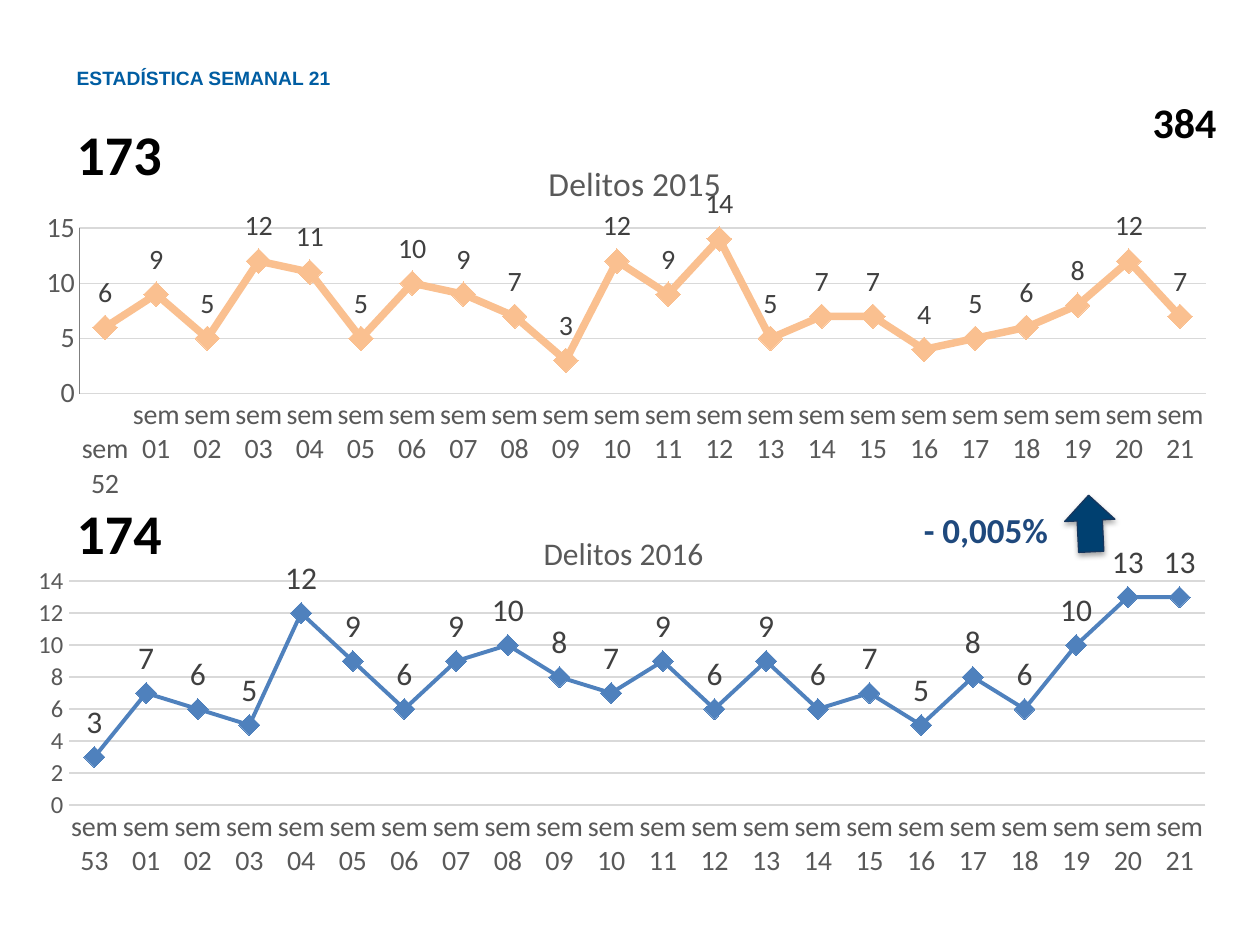
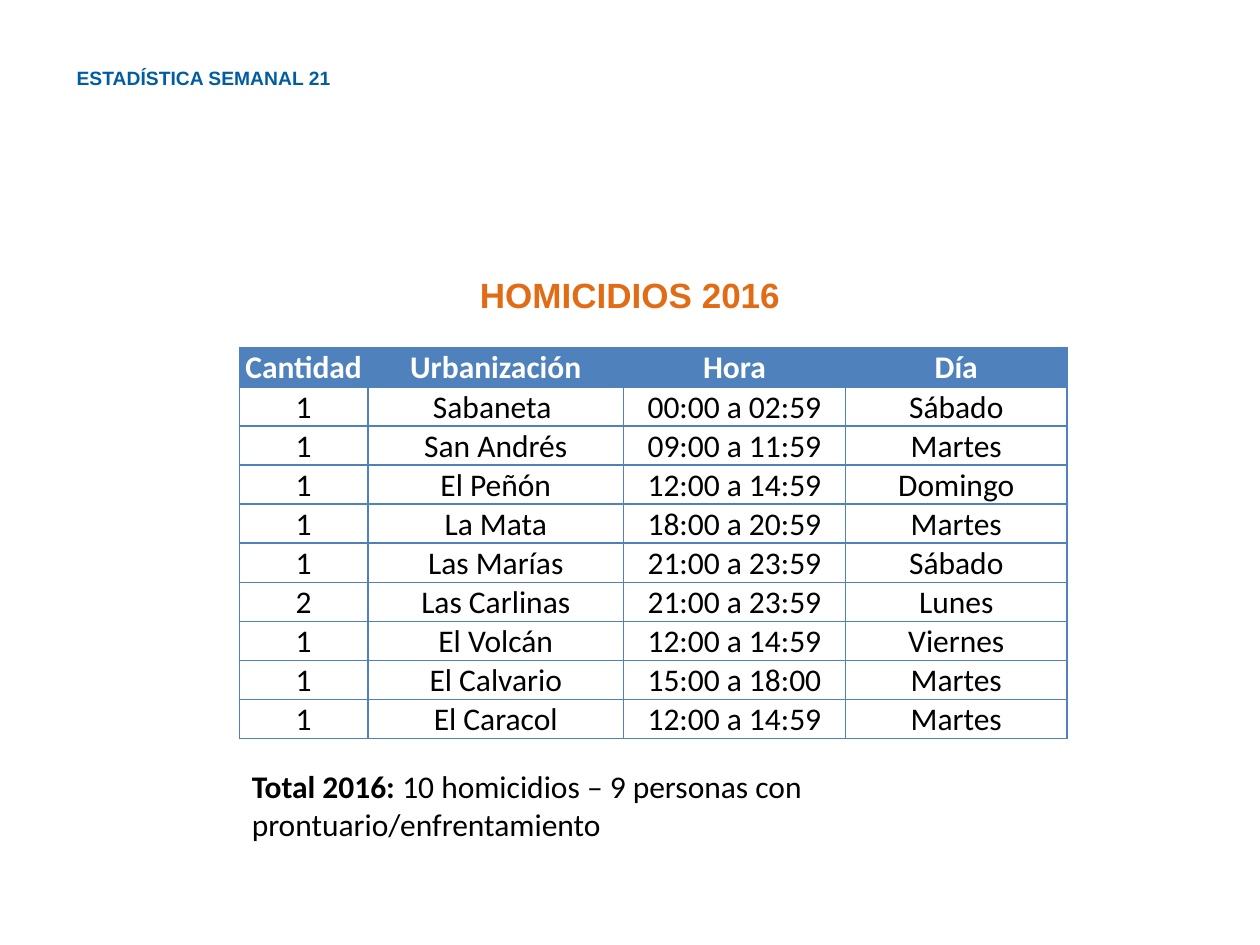
from lxml import etree
from pptx import Presentation
from pptx import util as u
from pptx.chart import data as chart_data
from pptx.dml.color import RGBColor
from pptx.enum import chart as ch, shapes, text
from pptx.oxml import ns, parse_xml

BLUE, ORANGE, PEACH = "4F81BD", "E16C15", "FAC090"
TITLE_BLUE, NAVY, ARROW_BLUE, ARROW_EDGE = "005DA2", "1F497D", "004070", "17375E"
BLACK, WHITE, GRID, AXIS_TEXT, LABEL_TEXT, AXIS_LINE = (
    "000000", "FFFFFF", "D9D9D9", "595959", "404040", "7F7F7F")
WEEKS = [f"sem {week:02d}" for week in range(1, 22)]
CRIMES_2015 = (6, 9, 5, 12, 11, 5, 10, 9, 7, 3, 12, 9, 14, 5, 7, 7, 4, 5, 6, 8, 12, 7)
CRIMES_2016 = (3, 7, 6, 5, 12, 9, 6, 9, 10, 8, 7, 9, 6, 9, 6, 7, 5, 8, 6, 10, 13, 13)
HOMICIDES = (
    ("Cantidad", "Urbanización", "Hora", "Día"),
    ("1", "Sabaneta ", "00:00 a 02:59", "Sábado"),
    ("1", "San Andrés", "09:00 a 11:59", "Martes"),
    ("1", "El Peñón", "12:00 a 14:59", "Domingo"),
    ("1", "La Mata", "18:00 a 20:59", "Martes"),
    ("1", "Las Marías", "21:00 a 23:59", "Sábado"),
    ("2", "Las Carlinas", "21:00 a 23:59", "Lunes"),
    ("1", "El Volcán", "12:00 a 14:59", "Viernes"),
    ("1", "El Calvario", "15:00 a 18:00", "Martes"),
    ("1", "El Caracol", "12:00 a 14:59", "Martes"),
)


def rgb(value):
    return RGBColor.from_string(value)


def inches(box):
    return [u.Inches(length) for length in box]


def style_font(font, size, color, bold=False, name="Calibri"):
    font.name, font.size, font.bold = name, u.Pt(size), bold
    font.color.rgb = rgb(color)


def style_line(line, color, width):
    line.color.rgb = rgb(color)
    line.width = u.Pt(width)


def add_text(page, box, spans, size, color=BLACK, name="Calibri",
             align=text.PP_ALIGN.LEFT, anchor=text.MSO_ANCHOR.TOP, wrap=True):
    frame = page.shapes.add_textbox(*inches(box)).text_frame
    frame.word_wrap, frame.vertical_anchor = wrap, anchor
    para = frame.paragraphs[0]
    para.alignment = align
    for words, bold in spans:
        span = para.add_run()
        span.text = words
        style_font(span.font, size, color, bold, name)


def add_page(deck):
    page = deck.slides.add_slide(deck.slide_layouts[6])
    add_text(page, (0.51, 0.47, 5.28, 0.29), [("ESTADÍSTICA SEMANAL 21", True)], 11,
             TITLE_BLUE, "Arial", anchor=text.MSO_ANCHOR.MIDDLE)
    return page


def place_in_chart(element, inner, **fractions):
    for old in element.findall(ns.qn("c:layout")):
        element.remove(old)
    layout = etree.Element(ns.qn("c:layout"))
    manual = etree.SubElement(layout, ns.qn("c:manualLayout"))
    values = {"layoutTarget": "inner"} if inner else {}
    values.update(xMode="edge", yMode="edge", **fractions)
    for key, value in values.items():
        etree.SubElement(manual, ns.qn(f"c:{key}")).set("val", str(value))
    element.insert(0 if inner else 1, layout)


def style_axis(axis, size):
    axis.major_tick_mark = axis.minor_tick_mark = ch.XL_TICK_MARK.NONE
    style_font(axis.tick_labels.font, size, AXIS_TEXT)


def add_crime_chart(page, box, title, title_size, title_at, plot, first_week, values,
                    color, width, marker_size, label_size, axis_size, top, step):
    data = chart_data.CategoryChartData()
    data.categories = [first_week] + WEEKS
    data.add_series("Series 1", values)
    chart = page.shapes.add_chart(ch.XL_CHART_TYPE.LINE_MARKERS, *inches(box), data).chart
    style_font(chart.font, axis_size, BLACK)
    chart.has_legend = False
    chart.has_title = True
    span = chart.chart_title.text_frame.paragraphs[0].add_run()
    span.text = title
    style_font(span.font, title_size, AXIS_TEXT)
    chart.chart_title.include_in_layout = False
    title_x, title_y = title_at
    place_in_chart(chart.chart_title.format.line and chart.chart_title._element, False,
                   x=title_x, y=title_y)
    left, upper, wide, high = plot
    place_in_chart(chart.plots[0]._element.getparent(), True,
                   x=left, y=upper, w=wide, h=high)

    weeks, counts = chart.category_axis, chart.value_axis
    style_axis(weeks, 16)
    style_line(weeks.format.line, GRID, 0.75)
    style_axis(counts, axis_size)
    counts.minimum_scale, counts.maximum_scale, counts.major_unit = 0, top, step
    style_line(counts.major_gridlines.format.line, GRID, 0.75)

    chart.plots[0].vary_by_categories = False
    series = chart.plots[0].series[0]
    series.smooth = False
    style_line(series.format.line, color, width)
    marker = series.marker
    marker.style, marker.size = ch.XL_MARKER_STYLE.DIAMOND, marker_size
    marker.format.fill.solid()
    marker.format.fill.fore_color.rgb = rgb(color)
    style_line(marker.format.line, color, 0.75)
    labels = series.data_labels
    labels.show_value, labels.position = True, ch.XL_LABEL_POSITION.ABOVE
    style_font(labels.font, label_size, LABEL_TEXT)
    return chart


def add_trend(page, left, top):
    add_text(page, (left, top + 0.06, 1.25, 0.44), [("- 0,005%", True)], 20, NAVY,
             align=text.PP_ALIGN.CENTER)
    arrow = page.shapes.add_shape(shapes.MSO_SHAPE.DOWN_ARROW,
                                  *inches((left + 1.25, top, 0.4, 0.45)))
    arrow.rotation = 177.3
    arrow.fill.solid()
    arrow.fill.fore_color.rgb = rgb(ARROW_BLUE)
    style_line(arrow.line, ARROW_EDGE, 0.75)
    arrow.shadow.inherit = False
    arrow._element.spPr.find(ns.qn("a:effectLst")).append(parse_xml(
        f'<a:outerShdw {ns.nsdecls("a")} blurRad="40000" dist="23000" dir="5400000" '
        f'rotWithShape="0"><a:srgbClr val="{BLACK}"><a:alpha val="35000"/>'
        '</a:srgbClr></a:outerShdw>'))


def build_crimes(deck):
    page = add_page(deck)
    chart_2015 = add_crime_chart(
        page, (0.18, 1.01, 9.59, 3.03), "Delitos 2015", 19.2, (0.43, 0.07),
        (0.047, 0.264, 0.932, 0.434), " sem 52", CRIMES_2015,
        PEACH, 4.25, 14, 16, 16, 15, 5)
    style_line(chart_2015.value_axis.format.line, AXIS_LINE, 0)
    chart_2016 = add_crime_chart(
        page, (0.12, 3.99, 9.65, 3.05), "Delitos 2016", 18, (0.43, 0.06),
        (0.044, 0.204, 0.935, 0.583), "sem 53", CRIMES_2016,
        BLUE, 2.25, 12, 18, 14, 14, 2)
    chart_2016.value_axis.format.line.fill.background()
    add_text(page, (9.05, 0.72, 0.71, 0.5), [("384", True)], 24, wrap=False)
    for total, top in (("173", 0.9), ("174", 3.91)):
        add_text(page, (0.51, top, 0.89, 0.64), [(total, True)], 32, wrap=False)
    add_trend(page, 7.2, 3.93)


def add_borders(cell):
    properties = cell._tc.get_or_add_tcPr()
    for side in ("lnL", "lnR", "lnT", "lnB"):
        properties.append(parse_xml(
            f'<a:{side} {ns.nsdecls("a")} w="12700"><a:solidFill>'
            f'<a:srgbClr val="{BLUE}"/></a:solidFill></a:{side}>'))


def add_homicide_table(page, left, top):
    widths, row_height = (1.02, 2.03, 1.76, 1.76), 0.28
    box = (left, top, sum(widths), row_height * len(HOMICIDES))
    table = page.shapes.add_table(len(HOMICIDES), len(widths), *inches(box)).table
    for column, width in zip(table.columns, widths):
        column.width = u.Inches(width)
    for row, record in enumerate(HOMICIDES):
        header = row == 0
        for column, words in enumerate(record):
            cell = table.cell(row, column)
            cell.margin_left = cell.margin_right = cell.margin_top = u.Inches(0.01)
            cell.margin_bottom = 0
            cell.vertical_anchor = text.MSO_ANCHOR.BOTTOM
            add_borders(cell)
            cell.fill.solid()
            cell.fill.fore_color.rgb = rgb(BLUE if header else WHITE)
            para = cell.text_frame.paragraphs[0]
            para.alignment = text.PP_ALIGN.CENTER
            span = para.add_run()
            span.text = words
            style_font(span.font, 18, WHITE if header else BLACK, header)


def build_homicides(deck):
    page = add_page(deck)
    add_text(page, (0, 2.12, 10, 0.79), [("HOMICIDIOS 2016", True)], 20, ORANGE, "Arial",
             align=text.PP_ALIGN.CENTER)
    add_homicide_table(page, 1.9, 2.76)
    add_text(page, (1.9, 6.04, 6.56, 0.71),
             [("Total 2016: ", True),
              ("10 homicidios – 9 personas con prontuario/enfrentamiento", False)], 18)


def main():
    deck = Presentation()
    deck.slide_width, deck.slide_height = u.Inches(10), u.Inches(7.5)
    build_crimes(deck)
    build_homicides(deck)
    deck.save("out.pptx")


if __name__ == "__main__":
    main()
